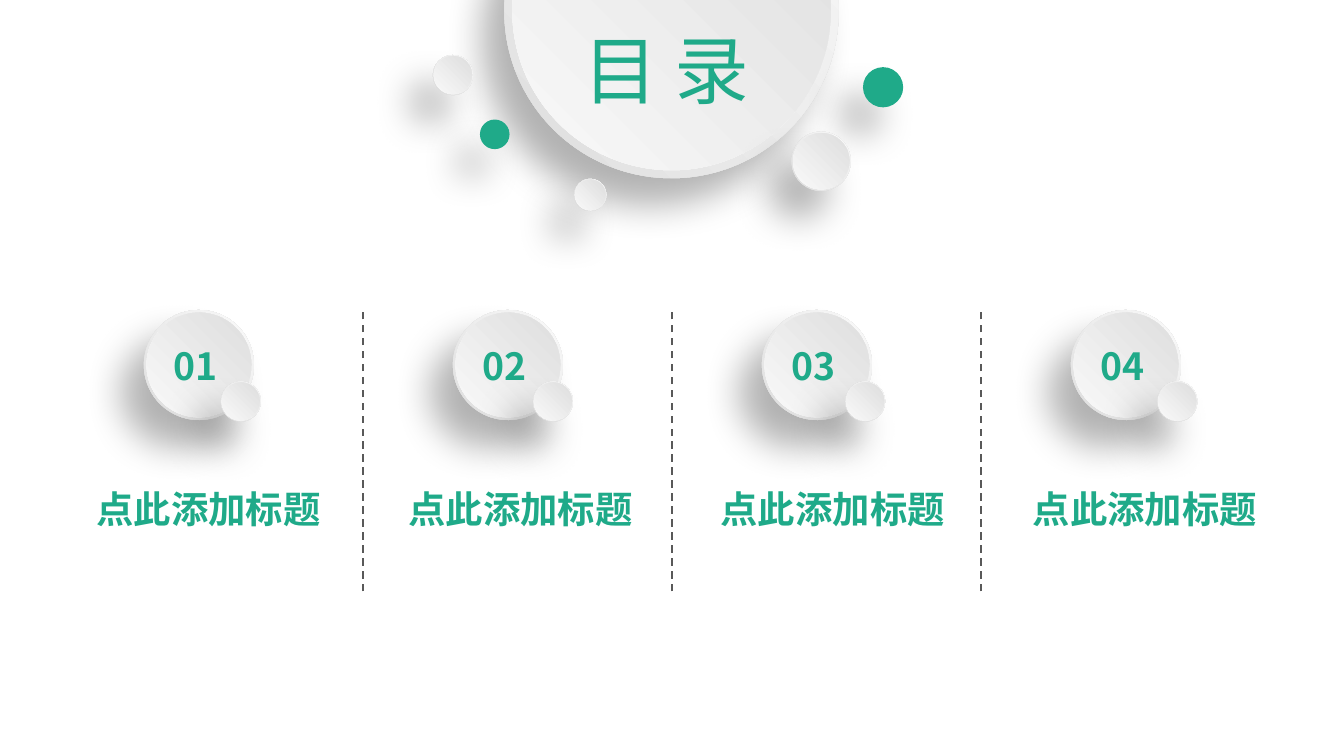
from lxml.etree import SubElement
from pptx import Presentation
from pptx.dml.color import RGBColor
from pptx.enum.dml import MSO_LINE
from pptx.enum.shapes import MSO_CONNECTOR, MSO_SHAPE
from pptx.enum.text import MSO_ANCHOR, MSO_AUTO_SIZE, PP_ALIGN
from pptx.oxml.ns import qn
from pptx.util import Cm, Pt

ACCENT = "1FAA89"
RIM = ("FFFFFF", "D9D9D9")
FACE = ("D9D9D9", "FEFEFE")


def color(hex_value):
    return RGBColor.from_string(hex_value)


def set_attributes(target, values):
    for name, value in values.items():
        setattr(target, name, value)


class AgendaSlide:
    font_name = "Noto Sans CJK SC"
    frame_format = {"word_wrap": False, "auto_size": MSO_AUTO_SIZE.NONE,
                    "vertical_anchor": MSO_ANCHOR.TOP,
                    "margin_left": Cm(0.25), "margin_right": Cm(0.25),
                    "margin_top": Cm(0.13), "margin_bottom": Cm(0.13)}

    def __init__(self, presentation):
        self.slide = presentation.slides.add_slide(presentation.slide_layouts[5])
        self.shapes = self.slide.shapes

    def fill_text(self, shape, text, size, bold):
        set_attributes(shape.text_frame, self.frame_format)
        paragraph = shape.text_frame.paragraphs[0]
        paragraph.text = text
        set_attributes(paragraph, {"alignment": PP_ALIGN.LEFT, "line_spacing": 1.0})
        font = paragraph.runs[0].font
        set_attributes(font, {"name": self.font_name, "size": Pt(size), "bold": bold})
        font.color.rgb = color(ACCENT)
        SubElement(font._element, qn("a:ea"), typeface=self.font_name)

    def title(self, text, left, top, width, height):
        shape = self.shapes.title
        set_attributes(shape, {"left": Cm(left), "top": Cm(top),
                               "width": Cm(width), "height": Cm(height)})
        self.fill_text(shape, text, 40, False)
        # Bring the title in front of the large disc
        self.shapes._spTree.append(shape._element)

    def text(self, text, left, top, width, height):
        shape = self.shapes.add_textbox(Cm(left), Cm(top), Cm(width), Cm(height))
        self.fill_text(shape, text, 20, True)

    def circle(self, left, top, size, colors):
        shape = self.shapes.add_shape(MSO_SHAPE.OVAL, Cm(left), Cm(top), Cm(size), Cm(size))
        shape.rotation = 29.5
        shape.shadow.inherit = False
        shape.line.fill.background()
        if isinstance(colors, str):
            shape.fill.solid()
            shape.fill.fore_color.rgb = color(colors)
            return shape
        shape.fill.gradient()
        for stop, hex_value in zip(shape.fill.gradient_stops, colors):
            stop.color.rgb = color(hex_value)
        # Radial gradient from the top right corner
        gradient = shape._element.spPr.find(qn("a:gradFill"))
        gradient.remove(gradient.find(qn("a:lin")))
        radial = SubElement(gradient, qn("a:path"), {"path": "circle"})
        SubElement(radial, qn("a:fillToRect"), l="100000", b="100000")
        return shape

    def disc(self, left, top, size, accent=None):
        rim = self.circle(left, top, size, accent or RIM)
        effects = rim._element.spPr.find(qn("a:effectLst"))
        shadow = SubElement(effects, qn("a:outerShdw"), blurRad=str(Pt(20)), dist=str(Pt(19)),
                            dir=str(130 * 60000), algn="ctr", rotWithShape="0")
        shade = SubElement(shadow, qn("a:srgbClr"), val="000000")
        SubElement(shade, qn("a:alpha"), val="30000")
        inset = size * 0.024
        self.circle(left + inset, top + inset, size - 2 * inset, accent or FACE)

    def divider(self, x, top, bottom):
        line = self.shapes.add_connector(MSO_CONNECTOR.STRAIGHT, Cm(x), Cm(bottom), Cm(x), Cm(top))
        set_attributes(line.line, {"width": Pt(1), "dash_style": MSO_LINE.DASH})
        line.line.color.rgb = color("595959")
        SubElement(line._element.spPr, qn("a:effectLst"))


def main():
    presentation = Presentation()
    set_attributes(presentation, {"slide_width": Cm(25.4), "slide_height": Cm(14.29)})
    agenda = AgendaSlide(presentation)

    # Heading disc with its satellites
    for left, top, size, accent in [
        (9.53, -2.95, 6.32, None),
        (8.18, 1.04, 0.76, None),
        (16.31, 1.27, 0.76, ACCENT),
        (10.85, 3.38, 0.61, None),
        (14.96, 2.49, 1.12, None),
        (9.07, 2.26, 0.56, ACCENT),
    ]:
        agenda.disc(left, top, size, accent)
    agenda.title("目 录", 10.77, 0.33, 3.96, 1.96)

    # Four numbered sections
    disc_pitch, label_pitch = 5.84, 5.9
    for index in range(4):
        disc_left = 2.72 + index * disc_pitch
        label_left = 1.57 + index * label_pitch
        agenda.disc(disc_left, 5.86, 2.08)
        agenda.text(f"{index + 1:02}", disc_left + 0.31, 6.35, 1.47, 1.12)
        agenda.disc(label_left + 2.6, 7.21, 0.76)
        agenda.text("点此添加标题", label_left, 9.06, 5.51, 1.12)

    # Dividers between the sections
    for index in range(3):
        agenda.divider(6.86 + index * disc_pitch, 5.82, 11.18)

    presentation.save("out.pptx")


if __name__ == "__main__":
    main()
